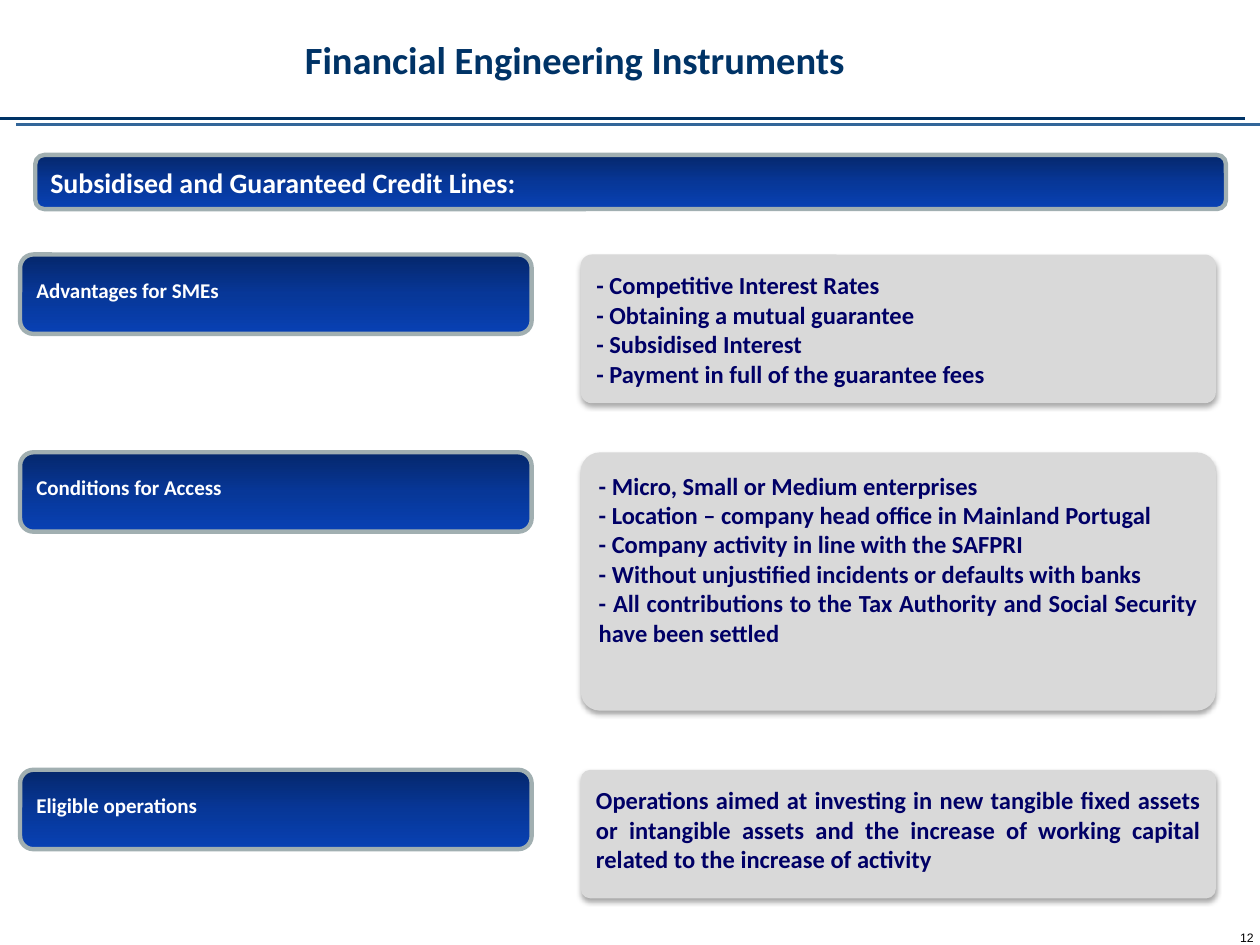
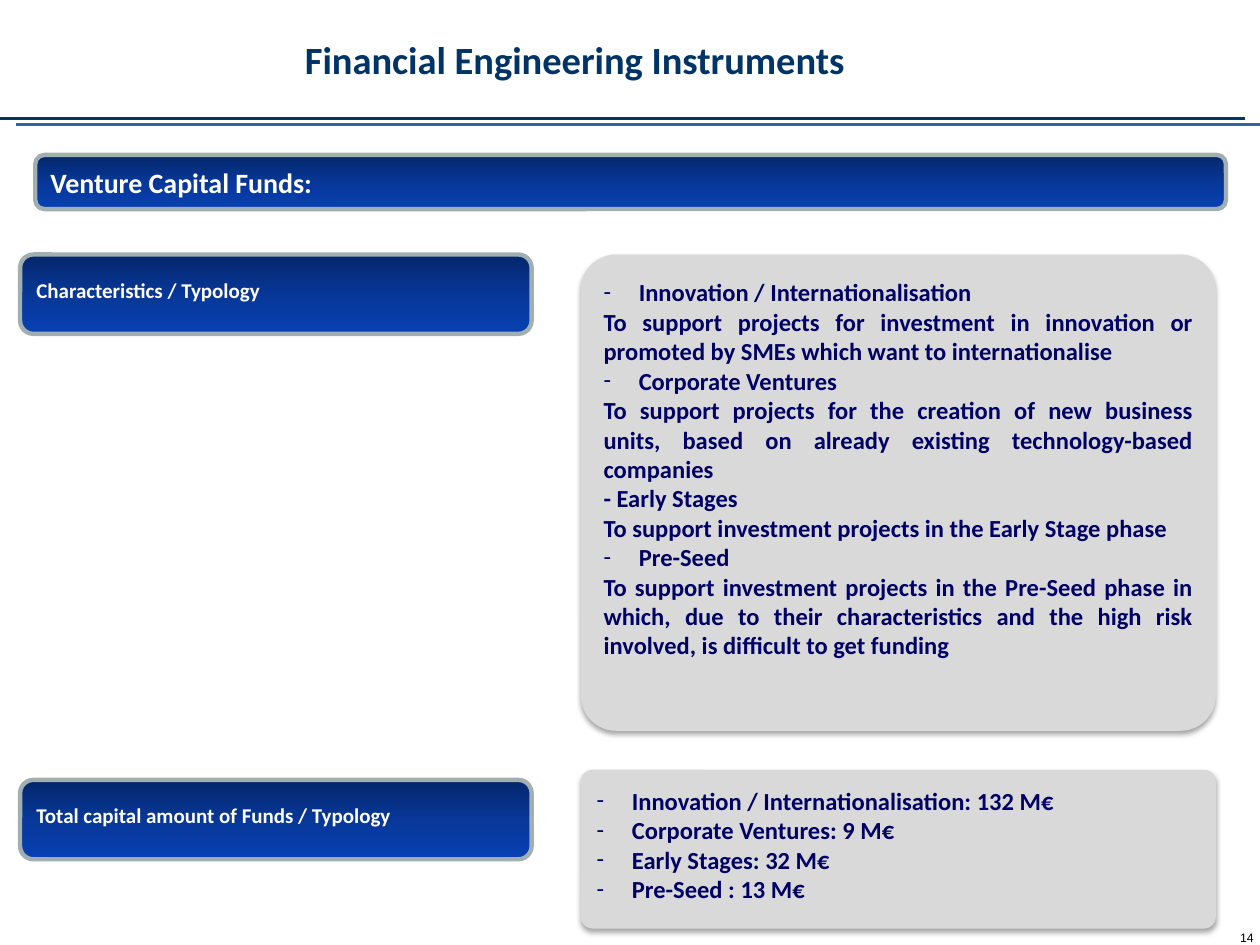
"""Build two slides on financial engineering instruments."""
import pptx
import pptx.dml.color
import pptx.enum.shapes
import pptx.enum.text
import pptx.oxml
import pptx.oxml.ns
import pptx.util
from lxml import etree

PX = 9144
NAVY, STEEL, INK = "003366", "336699", "000066"
GREY, EDGE, WHITE, BLACK = "D9D9D9", "A1AFB1", "FFFFFF", "000000"
BLUES = ((0, "05276B"), (50, "073798"), (100, "0841B4"))
ALIGN = pptx.enum.text.PP_ALIGN
ANCHOR = pptx.enum.text.MSO_ANCHOR
ROUND = pptx.enum.shapes.MSO_SHAPE.ROUNDED_RECTANGLE
LINE = pptx.enum.shapes.MSO_CONNECTOR.STRAIGHT


def rgb(code):
    return pptx.dml.color.RGBColor.from_string(code)


def px(*sizes):
    return [size * PX for size in sizes]


def node(parent, tag, **attrs):
    return etree.SubElement(parent, pptx.oxml.ns.qn("a:" + tag), attrs)


class Deck:
    """Hold the style and the current slide."""

    def __init__(self):
        self.file = pptx.Presentation()
        self.file.slide_width, self.file.slide_height = px(1000, 750)

    def start(self, title, number):
        self.slide = self.file.slides.add_slide(self.file.slide_layouts[5])
        self.rule(0, 988, 94, NAVY)
        self.rule(13, 1000, 99, STEEL)
        self.title(title)
        self.number(number)

    def rule(self, left, right, top, color):
        line = self.slide.shapes.add_connector(LINE, *px(left, top, right, top))
        line.line.color.rgb = rgb(color)
        line.line.width = pptx.util.Pt(1.5)
        node(line._element.spPr, "effectLst")

    def label_text(self, shape, text, size, color, align=ALIGN.LEFT,
                   anchor=ANCHOR.TOP, bold=True, font="Calibri"):
        frame = shape.text_frame
        frame.text = text
        frame.word_wrap = True
        frame.vertical_anchor = anchor
        for par in frame.paragraphs:
            par.alignment = align
            for run in par.runs:
                run.font.name = font
                run.font.size = pptx.util.Pt(size)
                run.font.bold = bold
                run.font.color.rgb = rgb(color)
        return frame

    def inset(self, frame, size):
        frame.margin_left = frame.margin_right = size * PX
        frame.margin_top = frame.margin_bottom = size * PX

    def title(self, text):
        shape = self.slide.shapes.title
        shape.left, shape.top, shape.width, shape.height = px(232, 5, 768, 84)
        self.label_text(shape, text, 22, NAVY, anchor=ANCHOR.MIDDLE)

    def number(self, number):
        box = self.slide.shapes.add_textbox(*px(956, 738, 39, 12))
        frame = self.label_text(box, str(number), 7, BLACK, ALIGN.RIGHT,
                                bold=False, font="Arial")
        self.inset(frame, 0)

    def panel(self, *place):
        shape = self.slide.shapes.add_shape(ROUND, *px(*place))
        shape.shadow.inherit = False
        return shape

    def plate(self, *place):
        shape = self.panel(*place)
        shape.fill.gradient()
        shape.fill.gradient_angle = 270
        stops = shape._element.spPr.find(".//" + pptx.oxml.ns.qn("a:gsLst"))
        for old in list(stops):
            stops.remove(old)
        for pos, color in BLUES:
            stop = node(stops, "gs", pos=str(pos * 1000))
            node(stop, "srgbClr", val=color)
        shape.line.color.rgb = rgb(EDGE)
        shape.line.width = pptx.util.Pt(2.5)
        return shape

    def band(self, text):
        shape = self.plate(28, 123, 945, 43)
        self.label_text(shape, text, 16, WHITE, anchor=ANCHOR.MIDDLE)

    def label(self, top, text):
        frame = self.label_text(self.plate(16, top, 406, 63), text, 12, WHITE)
        frame.paragraphs[0].line_spacing = 1.5

    def card(self, top, height, lines, dashed=()):
        shape = self.panel(461, top, 504, height)
        shape.adjustments[0] = 0.074
        shape.fill.solid()
        shape.fill.fore_color.rgb = rgb(GREY)
        shape.line.fill.background()
        self.shade(shape)
        frame = self.label_text(shape, "\n".join(lines), 14, INK,
                                ALIGN.JUSTIFY)
        self.inset(frame, 10)
        for index in dashed:
            self.dash(frame.paragraphs[index])

    def shade(self, shape):
        group = shape._element.spPr.find(pptx.oxml.ns.qn("a:effectLst"))
        shadow = node(group, "outerShdw", blurRad=str(int(pptx.util.Pt(3.1))),
                      dist=str(int(pptx.util.Pt(1.8))), dir="5400000",
                      rotWithShape="0")
        color = node(shadow, "srgbClr", val=BLACK)
        node(color, "alpha", val="35000")

    def dash(self, par):
        props = par._p.get_or_add_pPr()
        props.set("marL", str(28 * PX))
        props.set("indent", str(-28 * PX))
        node(node(props, "buClr"), "srgbClr", val=INK)
        node(props, "buFont", typeface="Calibri")
        node(props, "buChar", char="-")


def main():
    deck = Deck()
    title = "Financial Engineering Instruments"
    first, second, third = 202, 359, 611

    deck.start(title, 12)
    deck.band("Subsidised and Guaranteed Credit Lines:")
    deck.label(first, "Advantages for SMEs")
    deck.card(first, 118, [
        "- Competitive Interest Rates",
        "- Obtaining a mutual guarantee",
        "- Subsidised Interest",
        "- Payment in full of the guarantee fees"])
    deck.label(second, "Conditions for Access")
    deck.card(second, 205, [
        "- Micro, Small or Medium enterprises",
        "- Location – company head office in Mainland Portugal",
        "- Company activity in line with the SAFPRI",
        "- Without unjustified incidents or defaults with banks",
        "- All contributions to the Tax Authority and Social Security "
        "have been settled"])
    deck.label(third, "Eligible operations")
    deck.card(third, 102, [
        "Operations aimed at investing in new tangible fixed assets or "
        "intangible assets and the increase of working capital related to "
        "the increase of activity"])

    deck.start(title, 14)
    deck.band("Venture Capital Funds:")
    deck.label(first, "Characteristics / Typology")
    deck.card(first, 378, [
        "Innovation / Internationalisation",
        "To support projects for investment in innovation or promoted by "
        "SMEs which want to internationalise",
        "Corporate Ventures",
        "To support projects for the creation of new business units, based "
        "on already existing technology-based companies",
        "- Early Stages",
        "To support investment projects in the Early Stage phase",
        "Pre-Seed",
        "To support investment projects in the Pre-Seed phase in which, due "
        "to their characteristics and the high risk involved, is difficult "
        "to get funding"], dashed=(0, 2, 6))
    deck.label(third + 8, "Total capital amount of Funds / Typology")
    deck.card(third, 126, [
        "Innovation / Internationalisation: 132 M€",
        "Corporate Ventures: 9 M€",
        "Early Stages: 32 M€",
        "Pre-Seed : 13 M€"], dashed=range(4))

    deck.file.save("out.pptx")


if __name__ == "__main__":
    main()
